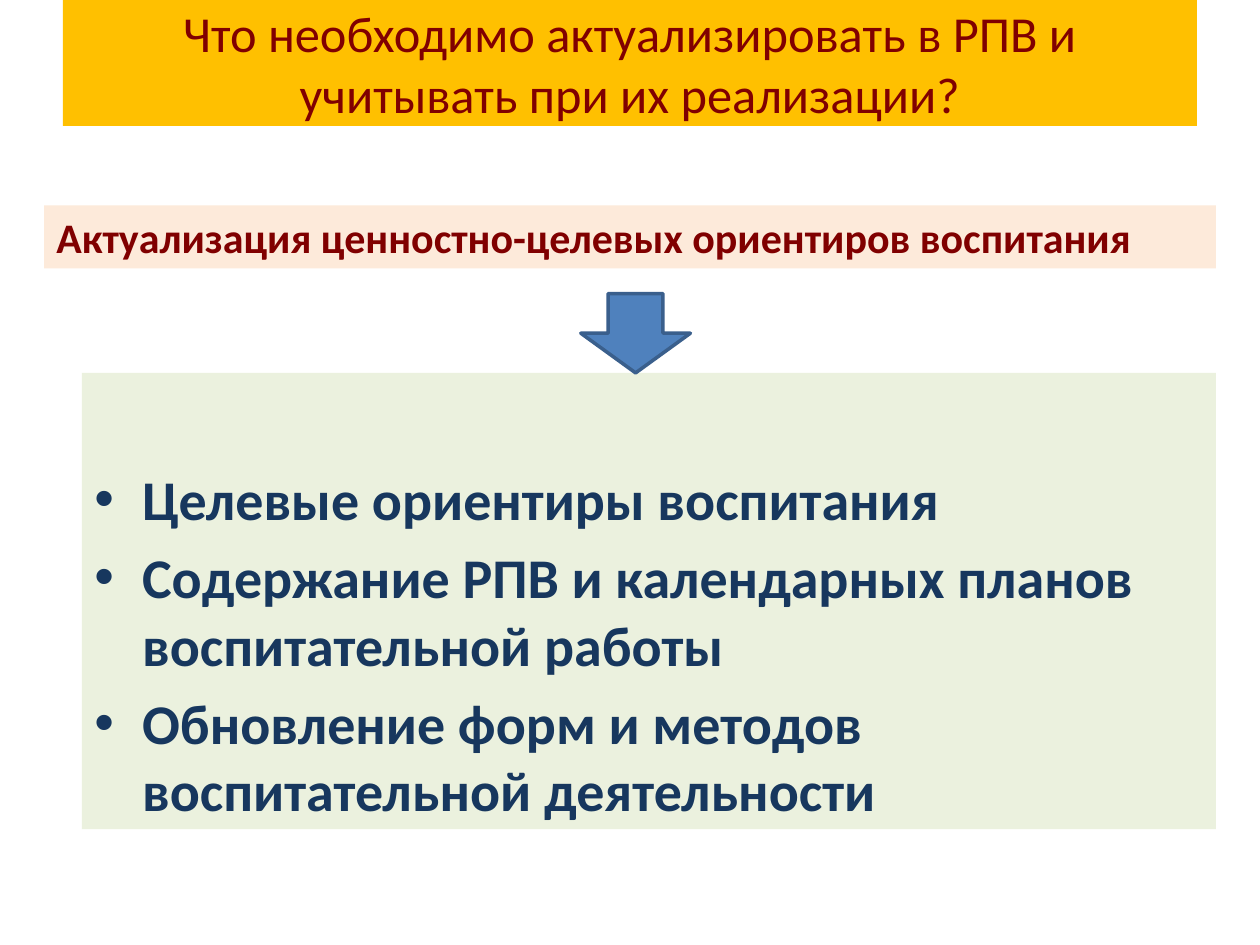
from dataclasses import dataclass

from lxml.etree import SubElement
from pptx import Presentation
from pptx.dml.color import RGBColor
from pptx.enum.shapes import MSO_SHAPE
from pptx.enum.text import MSO_ANCHOR, PP_ALIGN
from pptx.oxml.ns import qn
from pptx.util import Inches, Pt

FONT = "Calibri"
MAROON = "800000"
NAVY = "17375E"


@dataclass(frozen=True)
class Panel:
    left: float
    top: float
    width: float
    height: float
    fill: str
    shape: MSO_SHAPE = MSO_SHAPE.RECTANGLE
    line: str | None = None


def color(value: str) -> RGBColor:
    return RGBColor.from_string(value)


def add_panel(page, panel: Panel):
    box = page.shapes.add_shape(
        panel.shape,
        Inches(panel.left),
        Inches(panel.top),
        Inches(panel.width),
        Inches(panel.height),
    )
    box.shadow.inherit = False
    box.fill.solid()
    box.fill.fore_color.rgb = color(panel.fill)
    if panel.line:
        box.line.color.rgb = color(panel.line)
        box.line.width = Pt(2)
    else:
        box.line.fill.background()
    return box


def add_bullet(para, indent: float) -> None:
    properties = para._p.get_or_add_pPr()
    properties.set("marL", str(Inches(indent)))
    properties.set("indent", str(-Inches(indent)))
    SubElement(properties, qn("a:buFont")).set("typeface", "Arial")
    SubElement(properties, qn("a:buChar")).set("char", "•")


def write_text(box, text: str, *, size: float, ink: str, bold: bool = False,
               align: PP_ALIGN = PP_ALIGN.LEFT,
               anchor: MSO_ANCHOR = MSO_ANCHOR.MIDDLE,
               bullets: bool = False) -> None:
    frame = box.text_frame
    frame.word_wrap = True
    frame.vertical_anchor = anchor
    for index, line in enumerate(text.split("\n")):
        para = frame.add_paragraph() if index else frame.paragraphs[0]
        para.alignment = align
        if bullets:
            para.space_before = Pt(size * 0.2)
            add_bullet(para, 0.38)
        span = para.add_run()
        span.text = line
        span.font.name = FONT
        span.font.size = Pt(size)
        span.font.bold = bold
        span.font.color.rgb = color(ink)


def main() -> None:
    deck = Presentation()
    deck.slide_width = Inches(10)
    deck.slide_height = Inches(7.5)
    page = deck.slides.add_slide(deck.slide_layouts[6])

    title = add_panel(page, Panel(0.5, 0, 9, 1, "FFC000"))
    write_text(
        title,
        "Что необходимо актуализировать в РПВ и учитывать при их реализации?",
        size=28.8, ink=MAROON, align=PP_ALIGN.CENTER,
    )

    directions = add_panel(page, Panel(0.65, 2.96, 9, 3.62, "EBF1DE"))
    write_text(
        directions,
        "Целевые ориентиры воспитания\n"
        "Содержание РПВ и календарных планов воспитательной работы\n"
        "Обновление форм и методов воспитательной деятельности",
        size=32, ink=NAVY, bold=True, anchor=MSO_ANCHOR.BOTTOM, bullets=True,
    )

    heading = add_panel(page, Panel(0.35, 1.63, 9.3, 0.5, "FDEADA"))
    write_text(
        heading,
        "Актуализация ценностно-целевых ориентиров воспитания",
        size=24, ink=MAROON, bold=True,
    )

    add_panel(page, Panel(4.61, 2.33, 0.87, 0.63, "4F81BD", MSO_SHAPE.DOWN_ARROW, "3A5F8C"))

    deck.save("out.pptx")


if __name__ == "__main__":
    main()
